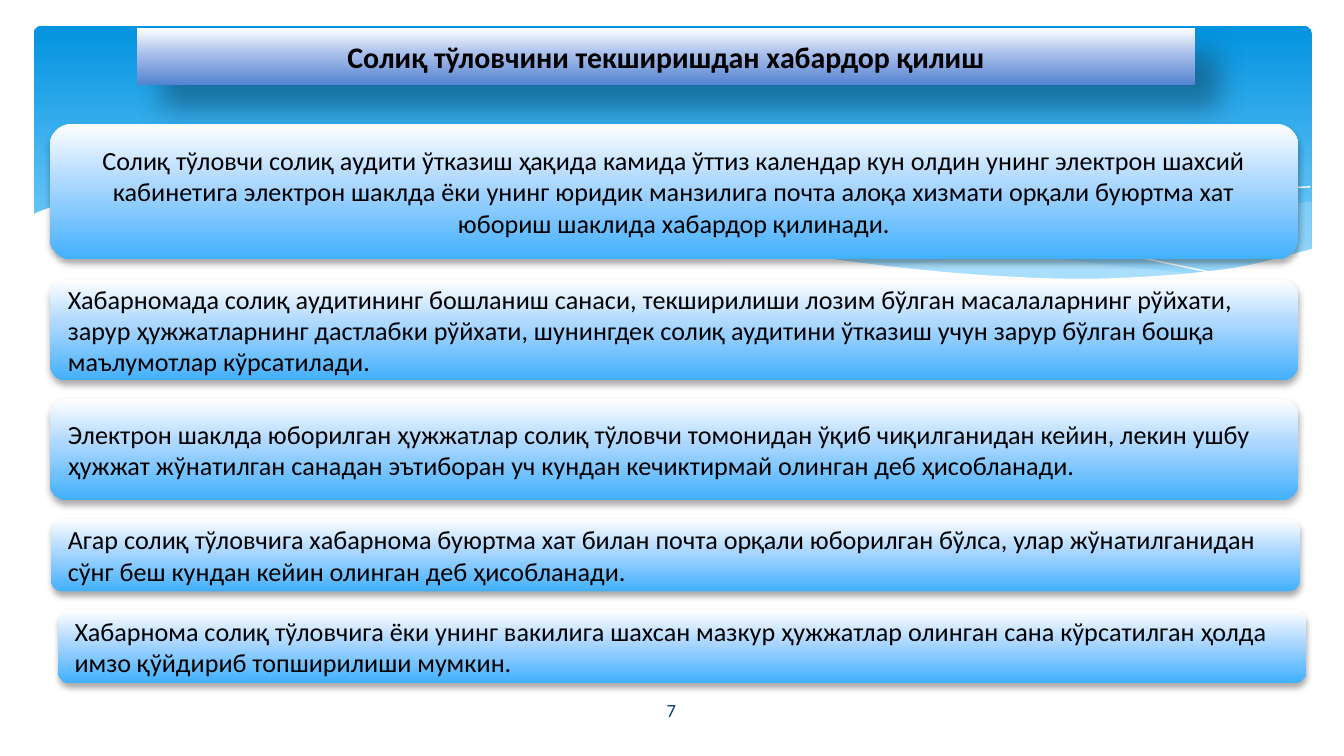
import lxml.etree
import pptx
import pptx.dml.color
import pptx.enum.shapes
import pptx.enum.text
import pptx.oxml.ns
import pptx.util

Inches, Pt = pptx.util.Inches, pptx.util.Pt
SHAPE = pptx.enum.shapes.MSO_SHAPE
ALIGN = pptx.enum.text.PP_ALIGN
qn = pptx.oxml.ns.qn

COLORS = {
    "white": "FFFFFF", "black": "000000", "number": "073E87", "sheet": "C6E7FC",
    "sky_top": "0293E0", "sky_end": "83D3FE",
    "title_mid": "ABC0EB", "title_end": "5484D1",
    "card_mid": "ACD7FF", "card_end": "42B0FD",
}
SKY_STOPS = [(0, "sky_top"), (90, "sky_end")]
TITLE_STOPS = [(0, "white"), (44, "title_mid"), (100, "title_end")]
CARD_STOPS = [(0, "white"), (44, "card_mid"), (100, "card_end")]

# Wave edges, in inches from the top left corner of the wave area
RIGHT_TOP = [(9.53, .12), (8.98, .19), (8.38, .29), (7.3, .48), (6.38, .61)]
RIGHT_BOTTOM = [(6.38, .61), (6.96, .66), (7.58, .7), (8.12, .7), (8.66, .66),
                (9.12, .58), (9.53, .47)]
MIDDLE_TOP = [(8.7, .66), (7.84, .57), (6.83, .42), (6.06, .28), (5.18, .14),
              (4.42, .05), (3.57, .01), (2.9, .03), (2.63, .06)]
MIDDLE_BOTTOM = [(2.63, .06), (3.39, .14), (4.26, .28), (5.43, .48), (6.42, .62),
                 (7.25, .69), (7.95, .71), (8.44, .69), (8.7, .66)]
FALLING_LINE = [(2.86, .09), (3.21, .05), (3.78, .02), (4.46, .03), (5.1, .07),
                (5.85, .15), (6.72, .26), (7.72, .43), (8.84, .66)]
RISING_LINE = [(5.9, .54), (6.72, .39), (7.53, .24), (8.43, .11), (9.01, .04), (9.52, .01)]
WHITE_TOP = [(9.54, .47), (8.97, .61), (8.27, .68), (7.55, .69), (6.65, .63),
             (5.56, .49), (4.24, .27), (3.17, .1), (2.27, .02), (1.38, 0),
             (.72, .05), (.23, .14), (0, .22)]
WHITE_CORNERS = [(0, 1.09), (9.54, 1.09)]

TITLE = "Солиқ тўловчини текширишдан хабардор қилиш"
RULES = [
    ((.37, .92, 9.29, 1.01), ALIGN.CENTER,
     "Солиқ тўловчи солиқ аудити ўтказиш ҳақида камида ўттиз календар кун олдин унинг "
     "электрон шахсий кабинетига электрон шаклда ёки унинг юридик манзилига почта алоқа "
     "хизмати орқали буюртма хат юбориш шаклида хабардор қилинади."),
    ((.37, 2.08, 9.29, .75), ALIGN.LEFT,
     "Хабарномада солиқ аудитининг бошланиш санаси, текширилиши лозим бўлган масалаларнинг "
     "рўйхати, зарур ҳужжатларнинг дастлабки рўйхати, шунингдек солиқ аудитини ўтказиш учун "
     "зарур бўлган бошқа маълумотлар кўрсатилади."),
    ((.37, 2.97, 9.29, .75), ALIGN.LEFT,
     "Электрон шаклда юборилган ҳужжатлар солиқ тўловчи томонидан ўқиб чиқилганидан кейин, "
     "лекин ушбу ҳужжат жўнатилган санадан эътиборан уч кундан кечиктирмай олинган деб "
     "ҳисобланади."),
    ((.38, 3.86, 9.29, .54), ALIGN.LEFT,
     "Агар солиқ тўловчига хабарнома буюртма хат билан почта орқали юборилган бўлса, улар "
     "жўнатилганидан сўнг беш кундан кейин олинган деб ҳисобланади."),
    ((.43, 4.54, 9.29, .54), ALIGN.LEFT,
     "Хабарнома солиқ тўловчига ёки унинг вакилига шахсан мазкур ҳужжатлар олинган сана "
     "кўрсатилган ҳолда имзо қўйдириб топширилиши мумкин."),
]


def rgb(name):
    return pptx.dml.color.RGBColor.from_string(COLORS[name])


def add_color(parent, name, alpha=None):
    color = lxml.etree.SubElement(parent, qn("a:srgbClr"), val=COLORS[name])
    if alpha is not None:
        lxml.etree.SubElement(color, qn("a:alpha"), val=str(alpha * 1000))


def fill_gradient(shape, stops):
    """Fill from top to bottom with (percent, colour name) stops."""
    shape.fill.gradient()
    shape.fill.gradient_angle = 270
    stop_list = shape._element.spPr.find(".//" + qn("a:gsLst"))
    for old_stop in list(stop_list):
        stop_list.remove(old_stop)
    for percent, name in stops:
        add_color(lxml.etree.SubElement(stop_list, qn("a:gs"), pos=str(percent * 1000)), name)
    shape.line.fill.background()


def cast_shadow(shape, alpha, blur, distance, angle):
    shape.shadow.inherit = False
    effects = shape._element.spPr.find(qn("a:effectLst"))
    shadow = lxml.etree.SubElement(
        effects, qn("a:outerShdw"), blurRad=str(Pt(blur)), dist=str(Pt(distance)),
        dir=str(angle * 60000), algn="tl", rotWithShape="0")
    add_color(shadow, "black", alpha)


def write(shape, text, size, align, color="black", bold=False):
    frame = shape.text_frame
    frame.word_wrap = True
    frame.vertical_anchor = pptx.enum.text.MSO_ANCHOR.MIDDLE
    frame.text = text
    frame.paragraphs[0].alignment = align
    font = frame.paragraphs[0].runs[0].font
    font.name, font.size, font.bold = "Calibri", Pt(size), bold
    font.color.rgb = rgb(color)


def smooth(knots, steps=6):
    """Points of a Catmull-Rom curve through the knots."""
    padded = [knots[0], *knots, knots[-1]]
    points = [knots[0]]
    for a, b, c, d in zip(padded, padded[1:], padded[2:], padded[3:]):
        for step in range(1, steps + 1):
            t = step / steps
            points.append(tuple(
                (2 * q + (r - p) * t + (2 * p - 5 * q + 4 * r - s) * t ** 2
                 + (3 * q - p - 3 * r + s) * t ** 3) / 2
                for p, q, r, s in zip(a, b, c, d)))
    return points


def add_wave(slide, origin, points, closed=True):
    points = [(Inches(x), Inches(y)) for x, y in points]
    builder = slide.shapes.build_freeform(*points[0], scale=1.0)
    builder.add_line_segments(points[1:], close=closed)
    wave = builder.convert_to_shape(*origin)
    wave.shadow.inherit = False
    return wave


def add_sheet(slide, origin, points, color, alpha=100):
    sheet = add_wave(slide, origin, points)
    sheet.fill.solid()
    sheet.fill.fore_color.rgb = rgb(color)
    sheet.line.fill.background()
    if alpha < 100:
        tint = sheet._element.spPr.find(qn("a:solidFill")).find(qn("a:srgbClr"))
        lxml.etree.SubElement(tint, qn("a:alpha"), val=str(alpha * 1000))


def add_backdrop(slide, left, top, width, height):
    sky = slide.shapes.add_shape(SHAPE.ROUNDED_RECTANGLE, left, top, width, height)
    sky.adjustments[0] = 0.03
    sky.shadow.inherit = False
    fill_gradient(sky, SKY_STOPS)

    origin = left - Inches(.02), top + Inches(1.19)
    add_sheet(slide, origin, smooth(RIGHT_TOP) + smooth(RIGHT_BOTTOM), "sheet", 29)
    add_sheet(slide, origin, smooth(MIDDLE_TOP) + smooth(MIDDLE_BOTTOM), "sheet", 40)
    for knots in (FALLING_LINE, RISING_LINE):
        thread = add_wave(slide, origin, smooth(knots), closed=False)
        thread.fill.background()
        thread.line.color.rgb = rgb("white")
        thread.line.width = Pt(0)
    add_sheet(slide, origin, smooth(WHITE_TOP) + WHITE_CORNERS, "white")


def place_title(slide, left, top, width, height):
    title = slide.shapes.title
    slide.shapes._spTree.append(title._element)  # in front of the backdrop
    title.left, title.top, title.width, title.height = left, top, width, height
    fill_gradient(title, TITLE_STOPS)
    cast_shadow(title, 30, 15, 18, 45)
    write(title, TITLE, 16, ALIGN.CENTER, bold=True)


def add_rule_card(slide, box, align, text):
    card = slide.shapes.add_shape(SHAPE.ROUNDED_RECTANGLE, *box)
    fill_gradient(card, CARD_STOPS)
    cast_shadow(card, 32, 3.5, 2.2, 90)
    write(card, text, 14, align)


def main():
    deck = pptx.Presentation()
    deck.slide_width = Inches(10)
    deck.slide_height = deck.slide_width * 9 // 16
    slide = deck.slides.add_slide(deck.slide_layouts.get_by_name("Title Only"))
    add_backdrop(slide, *map(Inches, (.25, .19, 9.51, 2.02)))
    place_title(slide, *map(Inches, (1.02, .21, 7.87, .42)))
    for box, align, text in RULES:
        add_rule_card(slide, [Inches(length) for length in box], align, text)
    page_number = slide.shapes.add_textbox(*map(Inches, (4.36, 5.13, 1.27, .3)))
    write(page_number, "7", 10, ALIGN.CENTER, "number")
    deck.save("out.pptx")


if __name__ == "__main__":
    main()
